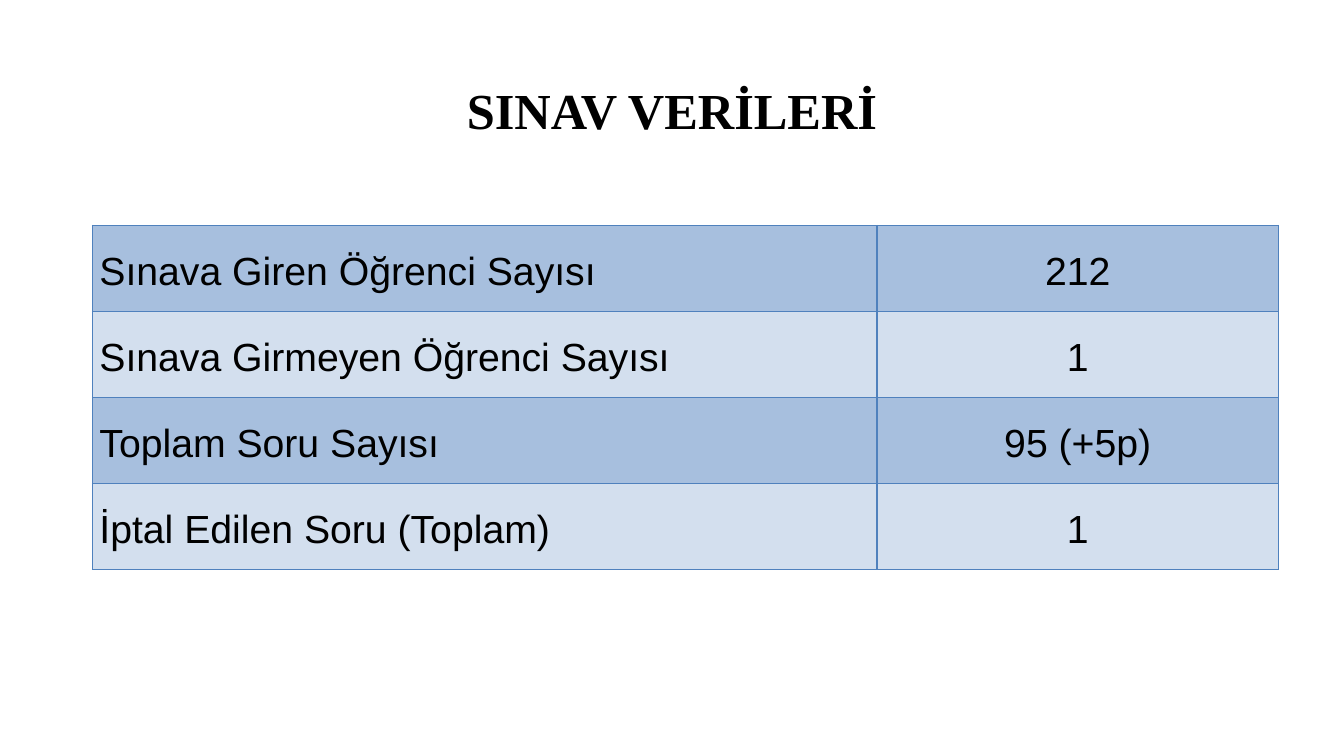
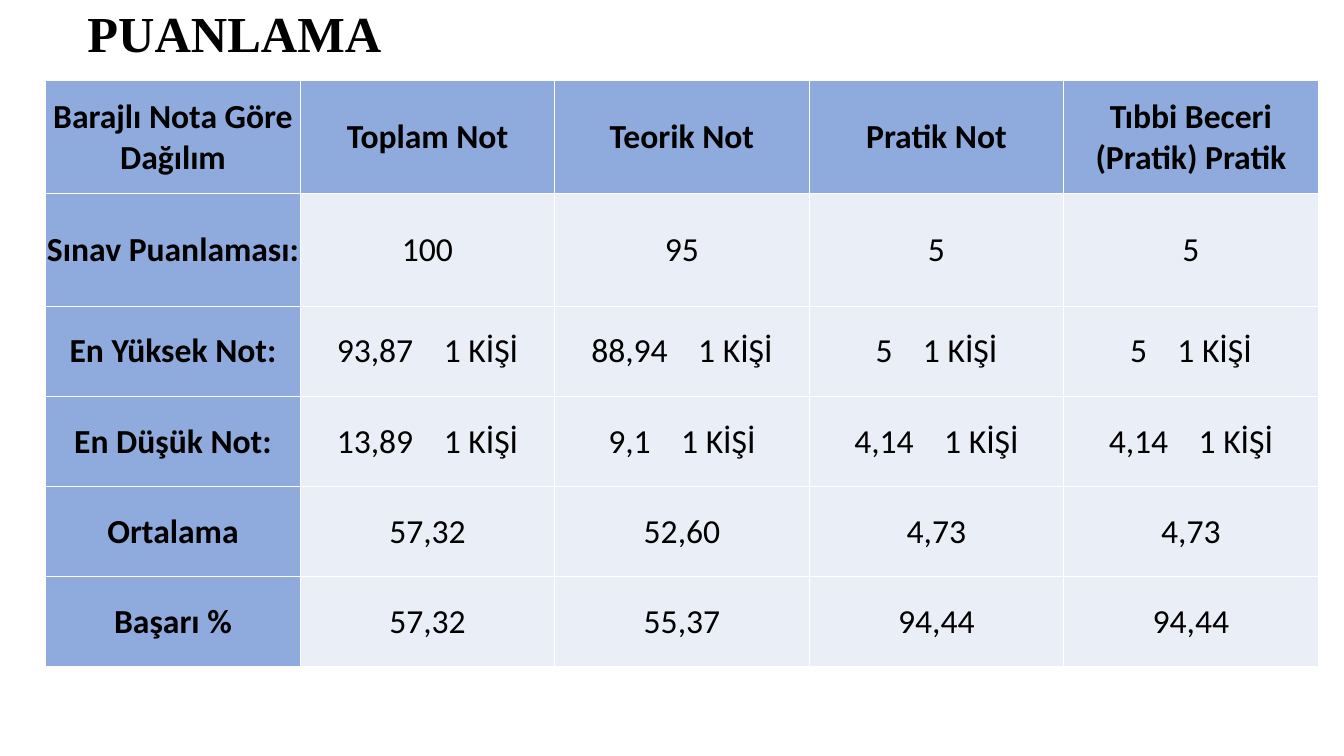
from lxml import etree
from pptx import Presentation, util as u
from pptx.dml.color import RGBColor
from pptx.enum import text
from pptx.oxml import ns

COLUMNS, ROWS = 160, 90
TITLE_ONLY = 5
LEFT, CENTER = text.PP_ALIGN.LEFT, text.PP_ALIGN.CENTER


def color(hex_string):
    return RGBColor.from_string(hex_string)


class Deck:
    ink = "000000"
    title_font, title_size = "Times New Roman", 36

    def __init__(self):
        self.prs = Presentation()
        self.prs.slide_width = u.Inches(13.33)
        self.prs.slide_height = u.Inches(7.5)
        self.slide = None

    def across(self, columns):
        return round(self.prs.slide_width * columns / COLUMNS)

    def down(self, rows):
        return round(self.prs.slide_height * rows / ROWS)

    def style(self, paragraph, font, size, bold, align, spacing):
        paragraph.alignment = align
        paragraph.line_spacing = spacing
        paragraph.font.name = font
        paragraph.font.size = u.Pt(size)
        paragraph.font.bold = bold
        paragraph.font.color.rgb = color(self.ink)

    def add_slide(self, title, left, top, width, height, align):
        self.slide = self.prs.slides.add_slide(self.prs.slide_layouts[TITLE_ONLY])
        heading = self.slide.shapes.title
        heading.left, heading.top = self.across(left), self.down(top)
        heading.width, heading.height = self.across(width), self.down(height)
        frame = heading.text_frame
        frame.text = title
        frame.word_wrap = True
        frame.auto_size = text.MSO_AUTO_SIZE.NONE
        frame.vertical_anchor = text.MSO_ANCHOR.MIDDLE
        self.style(frame.paragraphs[0], self.title_font, self.title_size, True, align, 0.9)

    def add_table(self, left, top, widths, heights, content, border, look):
        frame = self.slide.shapes.add_table(
            len(heights), len(widths), self.across(left), self.down(top),
            self.across(sum(widths)), self.down(sum(heights)))
        table = frame.table
        table.first_row = table.horz_banding = False
        for column, width in zip(table.columns, widths):
            column.width = self.across(width)
        for row, height in zip(table.rows, heights):
            row.height = self.down(height)
        for r, values in enumerate(content):
            for c, value in enumerate(values):
                self.fill_cell(table.cell(r, c), value, border, **look(r, c))

    def fill_cell(self, cell, value, border, fill, font, size, bold=False,
                  align=CENTER, spacing=1.0, inset=0):
        cell.fill.solid()
        cell.fill.fore_color.rgb = color(fill)
        cell.vertical_anchor = text.MSO_ANCHOR.MIDDLE
        cell.margin_left = cell.margin_right = u.Inches(inset)
        cell.margin_top = cell.margin_bottom = 0
        paragraph = cell.text_frame.paragraphs[0]
        self.style(paragraph, font, size, bold, align, spacing)
        if isinstance(value, tuple):
            self.add_score(paragraph, *value)
        else:
            paragraph.add_run().text = value
        self.add_borders(cell, border)

    def add_score(self, paragraph, score, people):
        paragraph.add_run().text = score
        gap = paragraph.add_run()
        gap.text = " "
        gap.font._element.set("spc", "1630")
        paragraph.add_run().text = people

    def add_borders(self, cell, border):
        properties = cell._tc.get_or_add_tcPr()
        for position, side in enumerate(("lnL", "lnR", "lnT", "lnB")):
            line = etree.Element(ns.qn(f"a:{side}"), w=str(u.Pt(1)))
            fill = etree.SubElement(line, ns.qn("a:solidFill"))
            etree.SubElement(fill, ns.qn("a:srgbClr"), val=border)
            properties.insert(position, line)


def exam_look(row, column):
    return dict(fill=("A7BFDE", "D3DFEE")[row % 2], font="Arial", size=28,
                align=CENTER if column else LEFT, spacing=1.15, inset=0.07)


def score_look(row, column):
    header = row == 0 or column == 0
    return dict(fill="8FAADC" if header else "EAEFF7", font="Calibri", size=24, bold=header)


def main():
    one = "1 KİŞİ"
    exam_data = [
        ("Sınava Giren Öğrenci Sayısı", "212"),
        ("Sınava Girmeyen Öğrenci Sayısı", "1"),
        ("Toplam Soru Sayısı", "95 (+5p)"),
        ("İptal Edilen Soru (Toplam)", "1"),
    ]
    scores = [
        ["Barajlı Nota Göre Dağılım", "Toplam Not", "Teorik Not", "Pratik Not",
         "Tıbbi Beceri (Pratik) Pratik"],
        ["Sınav Puanlaması:", "100", "95", "5", "5"],
        ["En Yüksek Not:", ("93,87", one), ("88,94", one), ("5", one), ("5", one)],
        ["En Düşük Not:", ("13,89", one), ("9,1", one), ("4,14", one), ("4,14", one)],
        ["Ortalama", "57,32", "52,60", "4,73", "4,73"],
        ["Başarı %", "57,32", "55,37", "94,44", "94,44"],
    ]

    deck = Deck()
    deck.add_slide("SINAV VERİLERİ", 11, 4.8, 138, 17.4, CENTER)
    deck.add_table(11, 26.85, [93.4, 47.8], [10.24] * 4, exam_data, "4F81BD", exam_look)
    deck.add_slide("PUANLAMA", 9.2, 1.1, 138, 6.4, LEFT)
    deck.add_table(5.45, 9.6, [30.3] * 5, [13.45] * 2 + [10.72] * 4, scores,
                   "FFFFFF", score_look)
    deck.prs.save("out.pptx")


if __name__ == "__main__":
    main()
